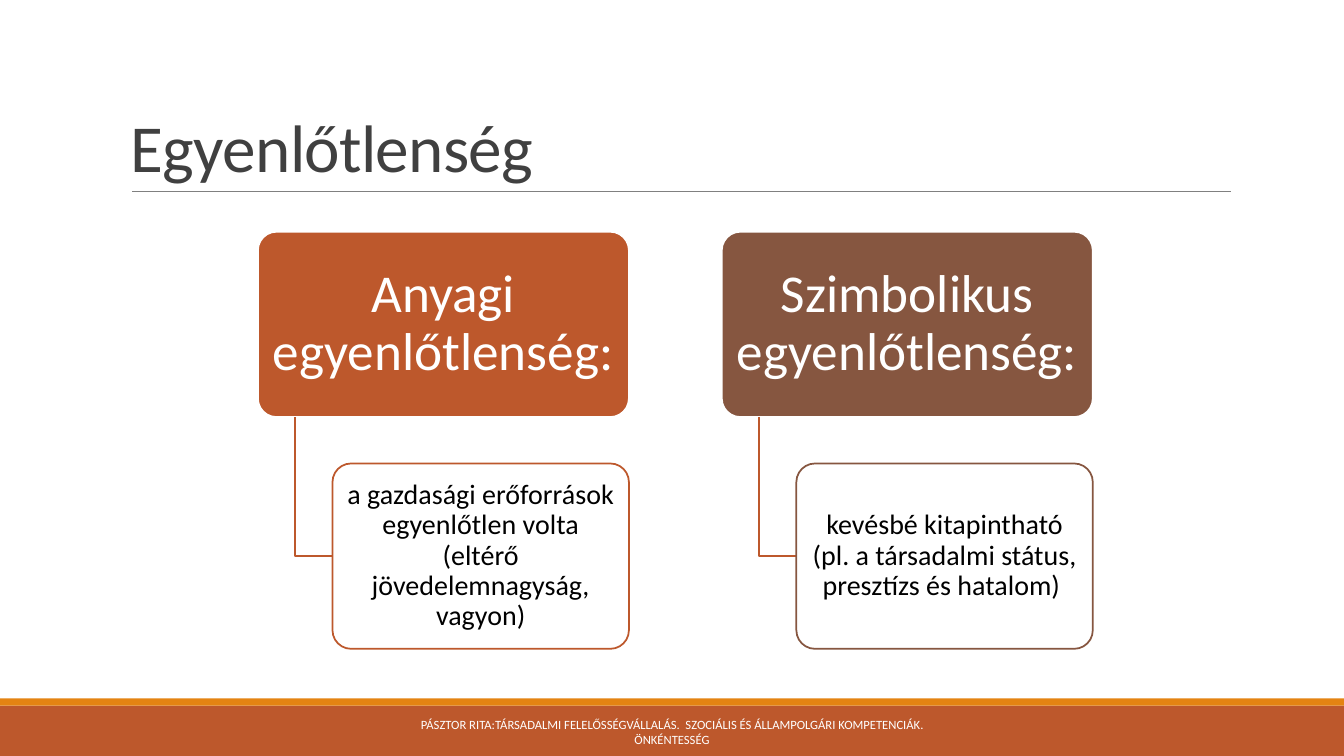
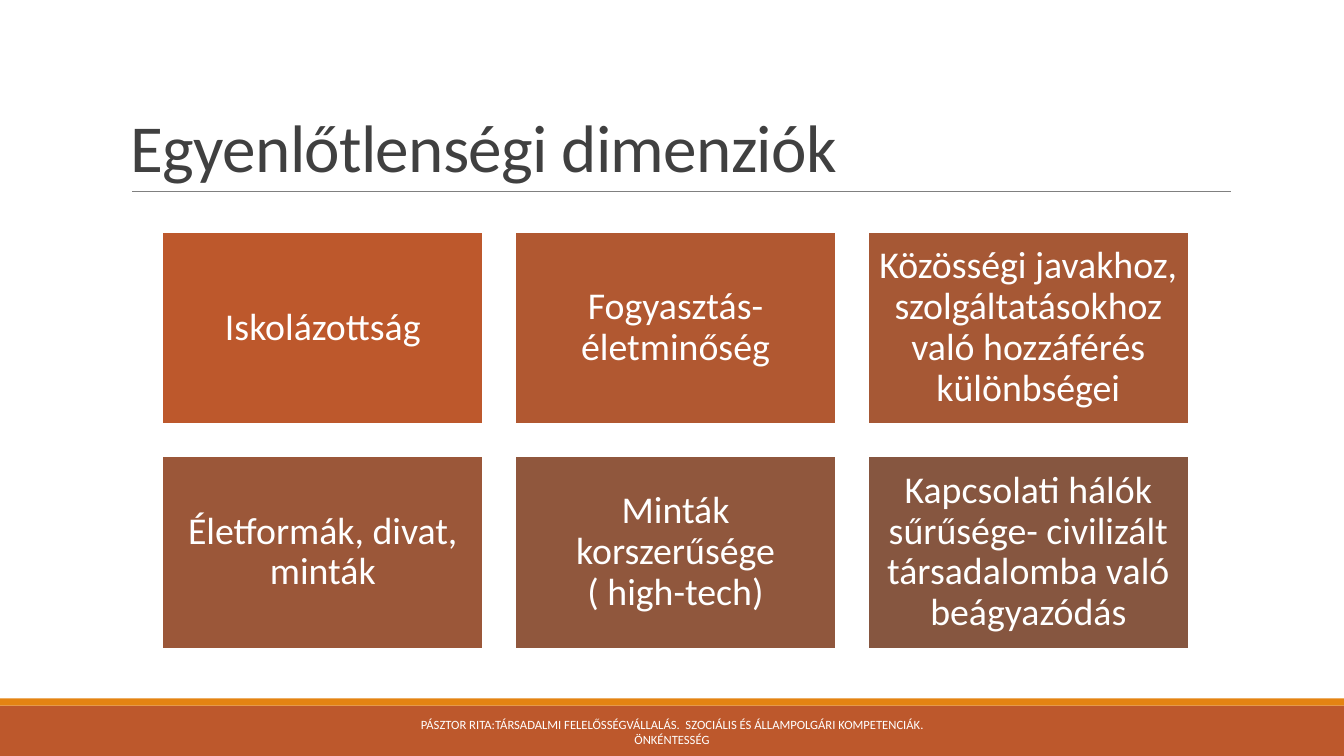
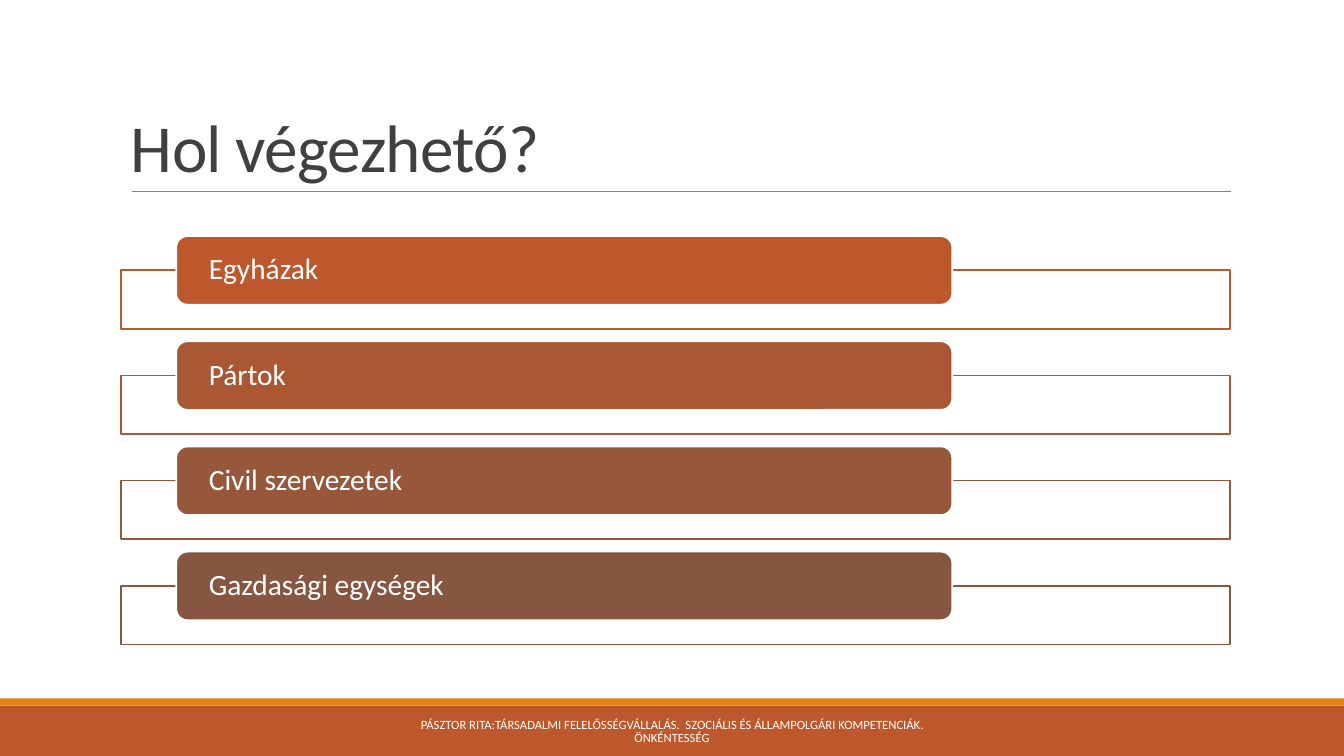
from dataclasses import dataclass
from typing import Optional

from lxml import etree
from pptx import Presentation
from pptx import util as u
from pptx.dml.color import RGBColor
from pptx.enum import shapes, text
from pptx.oxml.ns import qn

RUST, BROWN, ORANGE = "BD582C", "865640", "E48312"
WHITE, BLACK, DARK, GREY = "FFFFFF", "000000", "404040", "808080"
FONT = "Calibri"
OUTLINE = 1.25
WIDTH, HEIGHT = 33.87, 19.05
FOOTER = (
    "PÁSZTOR RITA:TÁRSADALMI FELELŐSSÉGVÁLLALÁS.  "
    "SZOCIÁLIS ÉS ÁLLAMPOLGÁRI KOMPETENCIÁK. ÖNKÉNTESSÉG"
)
RECT = shapes.MSO_SHAPE.RECTANGLE
ROUND = shapes.MSO_SHAPE.ROUNDED_RECTANGLE
LEFT, CENTER = text.PP_ALIGN.LEFT, text.PP_ALIGN.CENTER
MIDDLE, BOTTOM = text.MSO_ANCHOR.MIDDLE, text.MSO_ANCHOR.BOTTOM


@dataclass(frozen=True)
class Box:
    """A rectangle in centimetres."""
    x: float
    y: float
    w: float
    h: float

    def lengths(self) -> tuple:
        return u.Cm(self.x), u.Cm(self.y), u.Cm(self.w), u.Cm(self.h)


@dataclass(frozen=True)
class Inequality:
    heading: str
    detail: str
    color: str


@dataclass(frozen=True)
class Item:
    label: str
    color: str


INEQUALITIES = [
    Inequality(
        "Anyagi egyenlőtlenség: ",
        "a gazdasági erőforrások egyenlőtlen volta (eltérő jövedelemnagyság, vagyon)",
        RUST,
    ),
    Inequality(
        "Szimbolikus egyenlőtlenség: ",
        "kevésbé kitapintható (pl. a társadalmi státus, presztízs és hatalom) ",
        BROWN,
    ),
]
DIMENSIONS = [
    Item("Iskolázottság", RUST),
    Item("Fogyasztás-életminőség", "B15831"),
    Item("Közösségi javakhoz, szolgáltatásokhoz való hozzáférés különbségei", "A65835"),
    Item("Életformák, divat, minták", "9B5739"),
    Item("Minták korszerűsége ( high-tech)", "90573D"),
    Item("Kapcsolati hálók sűrűsége- civilizált társadalomba való beágyazódás", BROWN),
]
PLACES = [
    Item("Egyházak", RUST),
    Item("Pártok", "AA5834"),
    Item("Civil szervezetek", "97573A"),
    Item("Gazdasági egységek", BROWN),
]


def rgb(color: str) -> RGBColor:
    return RGBColor.from_string(color)


def write(sp, words: str, *, size: float, color: str = WHITE, align=CENTER, anchor=MIDDLE,
          spacing: float = 0.9, after: float = 0, tracking: int = 0,
          margins: tuple = (0.25, 0.13)) -> None:
    """Fill a shape with one paragraph; margins are (sides, top and bottom) in cm."""
    tf = sp.text_frame
    tf.word_wrap = True
    tf.auto_size = text.MSO_AUTO_SIZE.NONE
    tf.vertical_anchor = anchor
    tf.margin_left = tf.margin_right = u.Cm(margins[0])
    tf.margin_top = tf.margin_bottom = u.Cm(margins[1])
    p = tf.paragraphs[0]
    p.alignment, p.line_spacing, p.space_after = align, spacing, u.Pt(after)
    r = p.add_run()
    r.text = words
    r.font.name, r.font.size = FONT, u.Pt(size)
    r.font.color.rgb = rgb(color)
    if tracking:
        r.font._element.set("spc", str(tracking))


def add_box(s, kind, box: Box, fill: str, line: Optional[str] = None,
            opacity: int = 100, corner: Optional[float] = None):
    sp = s.shapes.add_shape(kind, *box.lengths())
    sp.shadow.inherit = False
    sp.fill.solid()
    sp.fill.fore_color.rgb = rgb(fill)
    if opacity < 100:
        clr = sp._element.spPr.find(qn("a:solidFill")).find(qn("a:srgbClr"))
        etree.SubElement(clr, qn("a:alpha")).set("val", str(opacity * 1000))
    if line:
        sp.line.color.rgb = rgb(line)
        sp.line.width = u.Pt(OUTLINE)
    else:
        sp.line.fill.background()
    if corner is not None:
        sp.adjustments[0] = corner
    return sp


def add_elbow(s, x: float, top: float, right: float, bottom: float) -> None:
    """Draw a line down from (x, top), then across to (right, bottom)."""
    builder = s.shapes.build_freeform(u.Cm(x), u.Cm(top))
    builder.add_line_segments(
        [(u.Cm(x), u.Cm(bottom)), (u.Cm(right), u.Cm(bottom))], close=False)
    sp = builder.convert_to_shape()
    sp.shadow.inherit = False
    sp.fill.background()
    sp.line.color.rgb = rgb(RUST)
    sp.line.width = u.Pt(OUTLINE)


def new_slide(prs, title: str, footer_spacing: float = 1.0):
    """Add a slide with the shared bands, title, rule and footer."""
    s = prs.slides.add_slide(prs.slide_layouts[5])
    add_box(s, RECT, Box(0, 17.78, WIDTH, 1.27), RUST)
    add_box(s, RECT, Box(0, 17.6, WIDTH, 0.18), ORANGE)
    rule = s.shapes.add_connector(
        shapes.MSO_CONNECTOR.STRAIGHT, u.Cm(3.33), u.Cm(4.83), u.Cm(31.01), u.Cm(4.83))
    rule.line.color.rgb = rgb(GREY)
    rule.line.width = u.Pt(0.5)
    etree.SubElement(rule._element.spPr, qn("a:effectLst"))

    sp = s.shapes.title
    sp.left, sp.top, sp.width, sp.height = Box(3.05, 0.79, 27.94, 4.04).lengths()
    write(sp, title, size=48, color=DARK, align=LEFT, anchor=BOTTOM,
          spacing=0.85, tracking=-50)
    footer = s.shapes.add_textbox(*Box(10.24, 17.93, 13.39, 1.02).lengths())
    write(footer, FOOTER, size=9, spacing=footer_spacing, after=6)
    return s


def inequality_slide(prs) -> None:
    s = new_slide(prs, "Egyenlőtlenség")
    height, indent = 4.67, 1.88
    for i, kind in enumerate(INEQUALITIES):
        head = Box(6.5 + i * 11.69, 5.84, 9.35, height)
        body = Box(head.x + indent, 11.68, head.w - indent, height)
        sp = add_box(s, ROUND, head, kind.color, WHITE, corner=0.1)
        write(sp, kind.heading, size=38, margins=(0.2, 0.13))
        add_elbow(s, head.x + indent / 2, head.y + height, body.x, body.y + height / 2)
        sp = add_box(s, ROUND, body, WHITE, kind.color, opacity=90, corner=0.1)
        write(sp, kind.detail, size=20, color=BLACK, margins=(0.1, 0.07))


def dimensions_slide(prs) -> None:
    s = new_slide(prs, "Egyenlőtlenségi dimenziók")
    for i, item in enumerate(DIMENSIONS):
        row, col = divmod(i, 3)
        tile = Box(4.09 + col * 8.89, 5.84 + row * 5.65, 8.09, 4.85)
        sp = add_box(s, RECT, tile, item.color, WHITE)
        write(sp, item.label, size=27, margins=(0.27, 0.27))


def places_slide(prs) -> None:
    s = new_slide(prs, "Hol végezhető?", footer_spacing=0.9)
    for i, item in enumerate(PLACES):
        y = 5.95 + i * 2.65
        add_box(s, RECT, Box(3.05, y + 0.86, 27.94, 1.48), WHITE, item.color, opacity=90)
        bar = add_box(s, ROUND, Box(4.44, y, 19.56, 1.73), item.color, WHITE)
        write(bar, item.label, size=21, align=LEFT, margins=(0.74, 0))


def main() -> None:
    prs = Presentation()
    prs.slide_width, prs.slide_height = u.Cm(WIDTH), u.Cm(HEIGHT)
    inequality_slide(prs)
    dimensions_slide(prs)
    places_slide(prs)
    prs.save("out.pptx")


if __name__ == "__main__":
    main()
